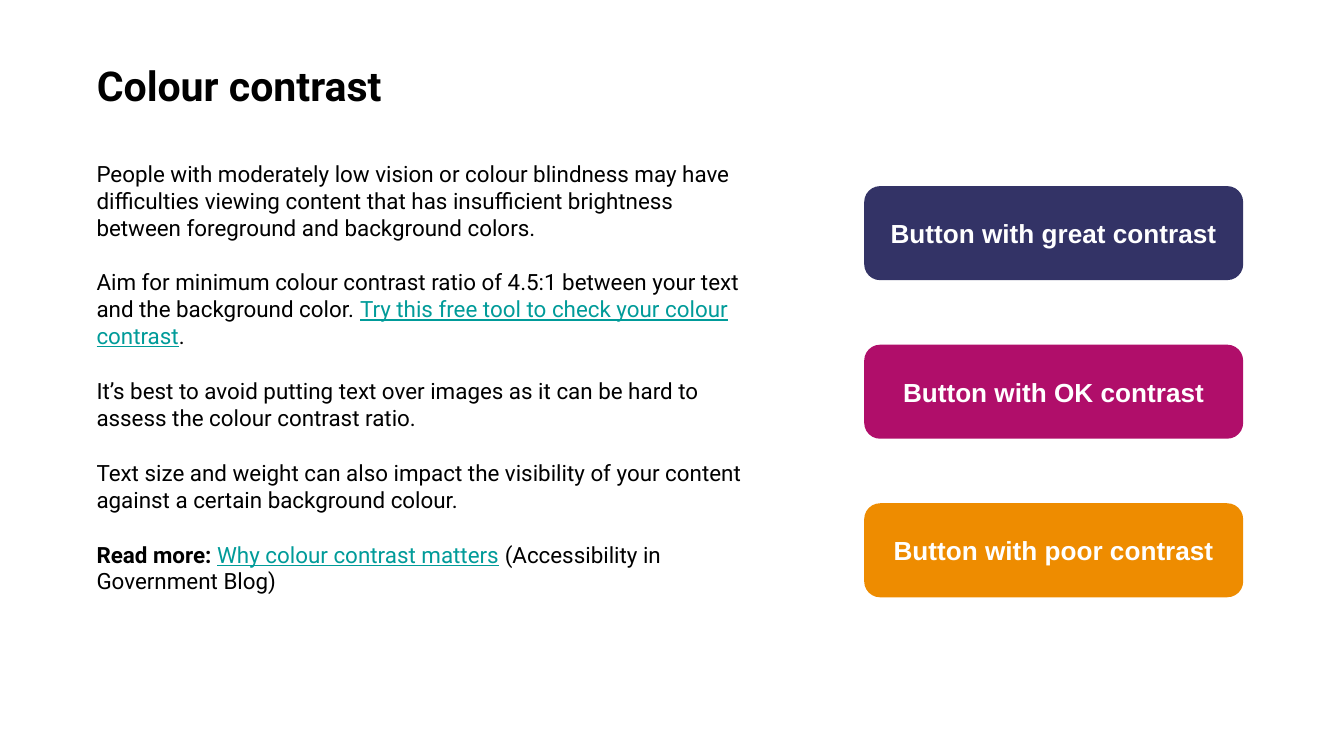
from pptx import Presentation
from pptx.dml.color import RGBColor
from pptx.enum.shapes import MSO_SHAPE
from pptx.enum.text import MSO_ANCHOR, MSO_AUTO_SIZE, PP_ALIGN
from pptx.util import Pt

SCALE = 4572
ROUND = MSO_SHAPE.ROUNDED_RECTANGLE
TOP, MIDDLE = MSO_ANCHOR.TOP, MSO_ANCHOR.MIDDLE
LEFT, CENTER = PP_ALIGN.LEFT, PP_ALIGN.CENTER
NO_FIT = MSO_AUTO_SIZE.NONE

COLORS = {
    "black": "000000",
    "white": "FFFFFF",
    "link": "009B99",
    "navy": "333366",
    "pink": "B00E6A",
    "orange": "EE8C00",
}

BODY = [
    [("People with moderately low vision or colour blindness may have "
      "difficulties viewing content that has insufficient brightness "
      "between foreground and background colors.", "plain")],
    [("Aim for minimum colour contrast ratio of 4.5:1 between your text "
      "and the background color. ", "plain"),
     ("Try this free tool to check your colour contrast", "link"),
     (".", "plain")],
    [("It’s best to avoid putting text over images as it can be hard to "
      "assess the colour contrast ratio.", "plain")],
    [("Text size and weight can also impact the visibility of your content "
      "against a certain background colour.", "plain")],
    [("Read more: ", "bold"),
     ("Why colour contrast matters", "link"),
     (" (Accessibility in Government Blog)", "plain")],
]

BUTTONS = [
    ("Button with great contrast", "navy"),
    ("Button with OK contrast", "pink"),
    ("Button with poor contrast", "orange"),
]


def px(*sizes):
    """Turn px lengths into a list of EMU lengths."""
    return [size * SCALE for size in sizes]


def tint(name):
    """Return the named colour."""
    return RGBColor.from_string(COLORS[name])


def style(run, face, size, color, bold=False):
    """Format one run of text."""
    font = run.font
    font.name, font.size, font.bold = face, Pt(size), bold
    font.color.rgb = tint(color)


def set_frame(frame, anchor):
    """Give a text frame its wrapping, margins and anchor."""
    frame.word_wrap = True
    frame.auto_size = NO_FIT
    frame.vertical_anchor = anchor
    frame.margin_left, frame.margin_top = px(20, 20)
    frame.margin_right, frame.margin_bottom = px(20, 20)


def add_title(slide, text):
    """Place and format the slide title."""
    title = slide.shapes.title
    title.left, title.top, title.width, title.height = px(124, 70, 1748, 126)
    frame = title.text_frame
    set_frame(frame, TOP)
    frame.text = text
    para = frame.paragraphs[0]
    para.alignment = LEFT
    style(para.runs[0], "Roboto", 22, "black", True)


def add_body(slide, paras):
    """Add the running text with its bold and link parts."""
    frame = slide.shapes.add_textbox(*px(124, 218, 1028, 666)).text_frame
    set_frame(frame, TOP)
    for i, parts in enumerate(paras):
        para = frame.add_paragraph() if i else frame.paragraphs[0]
        para.space_before = Pt(15 if i else 0)
        for text, kind in parts:
            run = para.add_run()
            run.text = text
            color = "link" if kind == "link" else "black"
            style(run, "Roboto", 12, color, kind == "bold")
            run.font.underline = kind == "link"


def add_button(slide, top, text, color):
    """Add one rounded button with a centred label."""
    shape = slide.shapes.add_shape(ROUND, *px(1286, top, 564, 140))
    shape.adjustments[0] = 0.17
    shape.shadow.inherit = False
    shape.fill.solid()
    shape.fill.fore_color.rgb = tint(color)
    shape.line.fill.background()
    frame = shape.text_frame
    set_frame(frame, MIDDLE)
    frame.text = text
    para = frame.paragraphs[0]
    para.alignment = CENTER
    style(para.runs[0], "Arial", 14, "white", True)


def main():
    """Build the slide and save it."""
    deck = Presentation()
    deck.slide_width, deck.slide_height = px(2000, 1125)
    slide = deck.slides.add_slide(deck.slide_layouts[5])
    add_title(slide, "Colour contrast")
    add_body(slide, BODY)
    for i, (text, color) in enumerate(BUTTONS):
        add_button(slide, 277 + 236 * i, text, color)
    deck.save("out.pptx")


if __name__ == "__main__":
    main()
